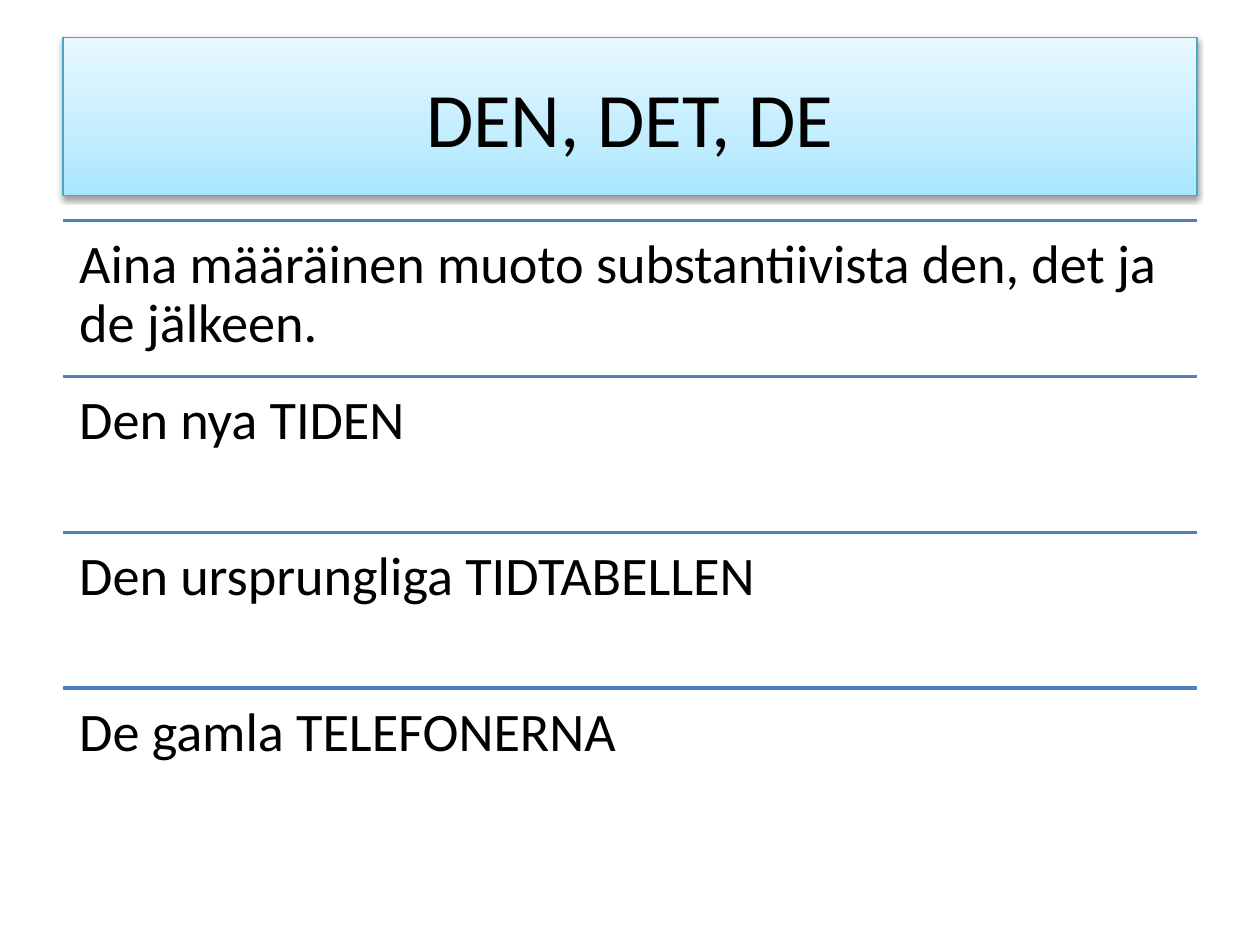
from copy import deepcopy

from pptx import Presentation
from pptx.dml.color import RGBColor
from pptx.enum.shapes import MSO_CONNECTOR
from pptx.enum.text import MSO_ANCHOR, PP_ALIGN
from pptx.oxml import parse_xml
from pptx.oxml.ns import nsdecls, qn
from pptx.util import Pt

STRAIGHT = MSO_CONNECTOR.STRAIGHT
TOP, MIDDLE = MSO_ANCHOR.TOP, MSO_ANCHOR.MIDDLE
CENTER = PP_ALIGN.CENTER

HEADING = "DEN, DET, DE"
RULE_AND_EXAMPLES = [
    "Aina määräinen muoto substantiivista den, det ja de jälkeen.",
    "Den nya TIDEN",
    "Den ursprungliga TIDTABELLEN",
    "De gamla TELEFONERNA",
]

FONT = "Calibri"
COLORS = {"text": "000000", "divider": "4F81BD", "heading_border": "46AAC5"}
HEADING_GRADIENT = [(0, "A7E6FF"), (0.35, "C1EDFF"), (1, "E7F8FF")]

LEFT, WIDTH = 36, 648
HEADING_TOP, HEADING_HEIGHT = 21.6, 90
ROWS_TOP, ROW_HEIGHT = 126, 89.1
ROW_INSET = 9.3


def rgb(name):
    return RGBColor.from_string(COLORS[name])


def add_text(paragraph, text, size):
    run = paragraph.add_run()
    run.text = text
    run.font.name = FONT
    run.font.size = Pt(size)
    run.font.color.rgb = rgb("text")


def fill_heading(heading):
    heading.fill.gradient()
    heading.fill.gradient_angle = 90
    stop_list = heading._element.spPr.find(qn("a:gradFill")).find(qn("a:gsLst"))
    stop_list.append(deepcopy(stop_list[0]))
    for stop, (position, color) in zip(heading.fill.gradient_stops, HEADING_GRADIENT):
        stop.position = position
        stop.color.rgb = RGBColor.from_string(color)


def shade_heading(heading):
    heading.shadow.inherit = False
    heading._element.spPr.find(qn("a:effectLst")).append(parse_xml(
        f'<a:outerShdw {nsdecls("a")} blurRad="{Pt(3.1)}" dist="{Pt(1.6)}" '
        'dir="5400000" rotWithShape="0"><a:srgbClr val="000000">'
        '<a:alpha val="38000"/></a:srgbClr></a:outerShdw>'))


def add_heading(slide):
    heading = slide.shapes.title
    heading.left, heading.top = Pt(LEFT), Pt(HEADING_TOP)
    heading.width, heading.height = Pt(WIDTH), Pt(HEADING_HEIGHT)
    fill_heading(heading)
    heading.line.color.rgb = rgb("heading_border")
    heading.line.width = Pt(0.75)
    shade_heading(heading)
    heading.text_frame.vertical_anchor = MIDDLE
    paragraph = heading.text_frame.paragraphs[0]
    paragraph.alignment = CENTER
    add_text(paragraph, HEADING, 44)


def add_row(slide, top, text):
    divider = slide.shapes.add_connector(
        STRAIGHT, Pt(LEFT), Pt(top), Pt(LEFT + WIDTH), Pt(top))
    divider.line.color.rgb = rgb("divider")
    divider.line.width = Pt(2)
    divider._element.spPr.append(parse_xml(f'<a:effectLst {nsdecls("a")}/>'))

    row = slide.shapes.add_textbox(Pt(LEFT), Pt(top), Pt(WIDTH), Pt(ROW_HEIGHT))
    frame = row.text_frame
    frame.word_wrap = True
    frame.vertical_anchor = TOP
    frame.margin_left = frame.margin_right = Pt(ROW_INSET)
    frame.margin_top = frame.margin_bottom = Pt(ROW_INSET)
    paragraph = frame.paragraphs[0]
    paragraph.line_spacing = 0.9
    add_text(paragraph, text, 31)


def main():
    deck = Presentation()
    deck.slide_width, deck.slide_height = Pt(720), Pt(540)
    slide = deck.slides.add_slide(deck.slide_layouts[5])
    add_heading(slide)
    for index, text in enumerate(RULE_AND_EXAMPLES):
        add_row(slide, ROWS_TOP + index * ROW_HEIGHT, text)
    deck.save("out.pptx")


if __name__ == "__main__":
    main()
